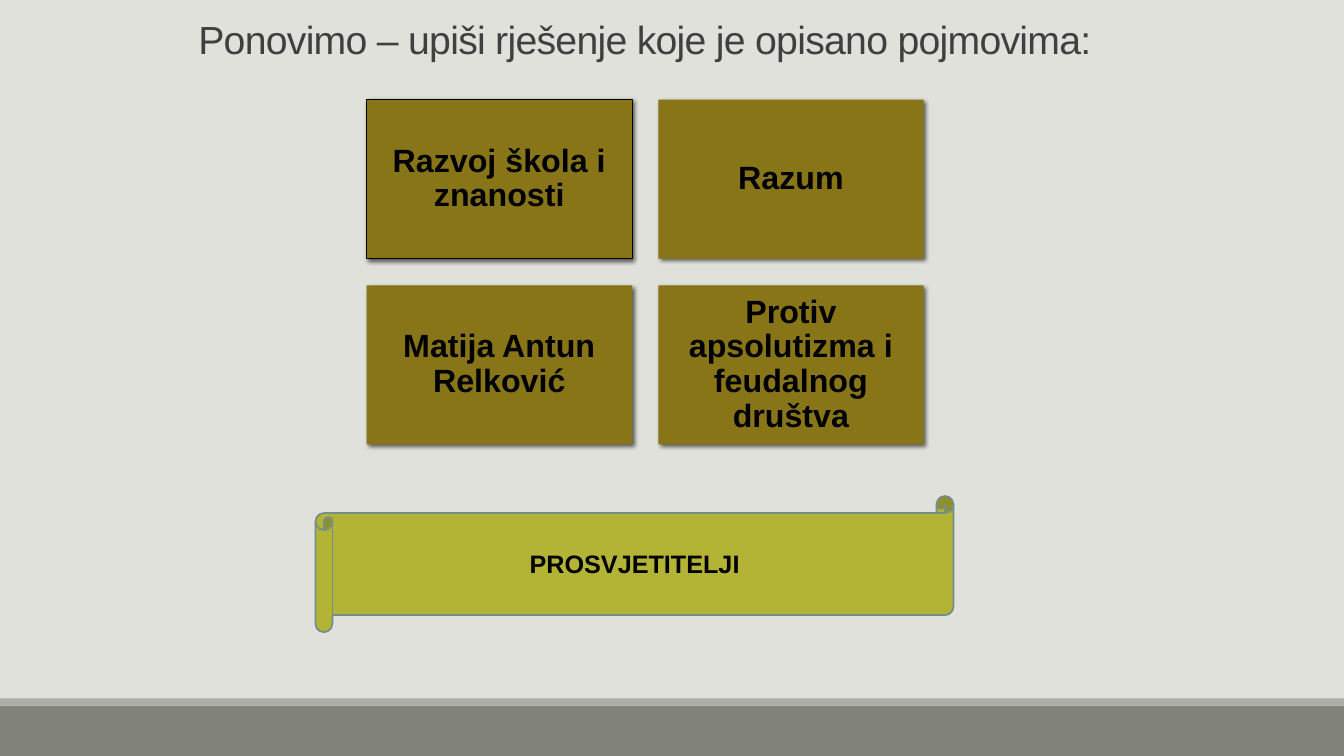
import pptx
import pptx.util
import pptx.dml.color
import pptx.enum.shapes
import pptx.enum.text
import pptx.oxml
import pptx.oxml.ns

Cm = pptx.util.Cm
Pt = pptx.util.Pt
Kind = pptx.enum.shapes.MSO_SHAPE
Mid = pptx.enum.text.MSO_ANCHOR.MIDDLE
Low = pptx.enum.text.MSO_ANCHOR.BOTTOM

theme = {
    "font": "Arial",
    "back": "E1E1DB", "base": "82847C", "strip": "ACADA8",
    "card": "887517", "scroll": "B3B435", "edge": "748D8D",
    "ink": "000000", "head": "404040",
    "title": 28, "term": 23, "answer": 18,
}


def hue(name):
    return pptx.dml.color.RGBColor.from_string(theme[name])


def write(shape, text, size, color, bold, space, anchor, inset):
    frame = shape.text_frame
    frame.text = text
    para = frame.paragraphs[0]
    font = para.runs[0].font
    font.color.rgb = hue(color)
    formats = [
        (frame, {"word_wrap": True, "vertical_anchor": anchor,
                 "margin_top": Cm(inset), "margin_bottom": Cm(inset),
                 "margin_left": Cm(0.25), "margin_right": Cm(0.25)}),
        (para, {"alignment": pptx.enum.text.PP_ALIGN.CENTER, "line_spacing": space}),
        (font, {"name": theme["font"], "size": Pt(theme[size]), "bold": bold}),
    ]
    for part, values in formats:
        for key, value in values.items():
            setattr(part, key, value)
    return font


def draw(kind, box, fill, line=None, width=0):
    shape = slide.shapes.add_shape(kind, *map(Cm, box))
    shape.shadow.inherit = False
    shape.fill.solid()
    shape.fill.fore_color.rgb = hue(fill)
    if line:
        shape.line.color.rgb = hue(line)
        shape.line.width = Pt(width)
    else:
        shape.line.fill.background()
    return shape


deck = pptx.Presentation()
deck.slide_width, deck.slide_height = Cm(33.87), Cm(19.05)
slide = deck.slides.add_slide(deck.slide_layouts[5])
slide.background.fill.solid()
slide.background.fill.fore_color.rgb = hue("back")

draw(Kind.RECTANGLE, (0, 17.78, 33.87, 1.27), "base")
draw(Kind.RECTANGLE, (0, 17.6, 33.87, 0.18), "strip")

title = slide.shapes.title
place = {"left": 1.12, "top": 0.25, "width": 30.25, "height": 1.45}
for key, value in place.items():
    setattr(title, key, Cm(value))
font = write(title, "Ponovimo – upiši rješenje koje je opisano pojmovima:",
             "title", "head", False, 0.85, Low, 0.13)
font._element.set("spc", "-50")

shade = f"""<a:outerShdw {pptx.oxml.ns.nsdecls("a")} blurRad="38100" dist="25400"
 dir="2700000" algn="tl" rotWithShape="0"><a:srgbClr val="{theme["ink"]}">
<a:alpha val="60000"/></a:srgbClr></a:outerShdw>"""
terms = ["Razvoj škola i znanosti", "Razum",
         "Matija Antun Relković", "Protiv apsolutizma i feudalnog društva"]
for i, term in enumerate(terms):
    row, col = divmod(i, 2)
    box = (9.24 + col * 7.35, 2.51 + row * 4.68, 6.69, 4.01)
    card = draw(Kind.RECTANGLE, box, "card", None if i else "ink", 0.75)
    effect = card._element.spPr.find(pptx.oxml.ns.qn("a:effectLst"))
    effect.append(pptx.oxml.parse_xml(shade))
    write(card, term, "term", "ink", True, 0.9, Mid, 0.25)

draw(Kind.HORIZONTAL_SCROLL, (7.95, 12.5, 16.08, 3.43), "scroll", "edge", 1.25)
answer = slide.shapes.add_textbox(Cm(11.84), Cm(13.69), Cm(8.31), Cm(1.03))
write(answer, "PROSVJETITELJI", "answer", "ink", True, 1.0, Mid, 0.13)

deck.save("out.pptx")
